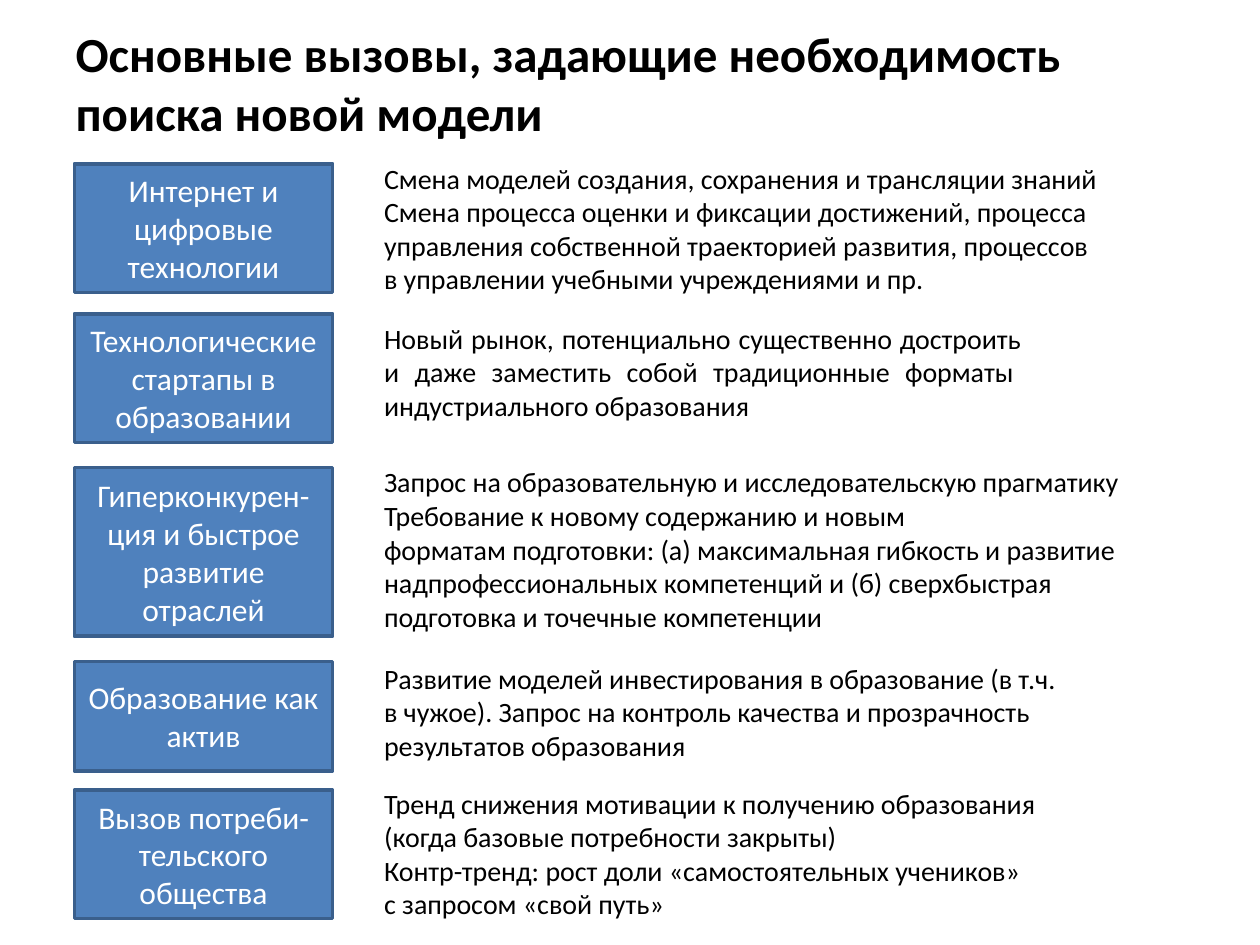
"""Builds a slide pairing challenges to education with their consequences."""
from pptx import Presentation
from pptx.dml.color import RGBColor
from pptx.enum.shapes import MSO_SHAPE
from pptx.enum.text import MSO_ANCHOR, MSO_AUTO_SIZE, PP_ALIGN
from pptx.util import Pt

RECTANGLE = MSO_SHAPE.RECTANGLE
MIDDLE = MSO_ANCHOR.MIDDLE
FIT_SHAPE = MSO_AUTO_SIZE.SHAPE_TO_FIT_TEXT
LEFT, CENTER, JUSTIFY = PP_ALIGN.LEFT, PP_ALIGN.CENTER, PP_ALIGN.JUSTIFY

COLORS = {"text": "000000", "label": "FFFFFF", "fill": "4F81BD", "border": "3A5F8C"}
FONT = "Calibri"
LABEL_LEFT, LABEL_WIDTH = 42.5, 147.6
DETAIL_LEFT = 212.4

HEADING = "Основные вызовы, задающие необходимость \nпоиска новой модели"

CHALLENGES = [
    ("Интернет и цифровые технологии", 93.6, 73.5,
     ["Смена моделей создания, сохранения и трансляции знаний",
      "Смена процесса оценки и фиксации достижений, процесса \n"
      "управления собственной траекторией развития, процессов \n"
      "в управлении учебными учреждениями и пр."],
     88.6, 426.2, 85, LEFT, False),
    ("Технологические\nстартапы в образовании", 179.3, 73.5,
     ["Новый рынок, потенциально существенно достроить \n"
      "и даже заместить собой традиционные форматы \n"
      "индустриального образования"],
     180, 383, 65.5, JUSTIFY, False),
    ("Гиперконкурен-ция и быстрое развитие отраслей", 267.1, 96.5,
     ["Запрос на образовательную и исследовательскую прагматику",
      "Требование к новому содержанию и новым \n"
      "форматам подготовки: (а) максимальная гибкость и развитие\n"
      "надпрофессиональных компетенций и (б) сверхбыстрая \n"
      "подготовка и точечные компетенции"],
     262.1, 439.2, 104.4, LEFT, False),
    ("Образование как актив", 378, 62.6,
     ["Развитие моделей инвестирования в образование (в т.ч.\n"
      "в чужое). Запрос на контроль качества и прозрачность\n"
      "результатов образования"],
     374.4, 403.2, 65.5, LEFT, False),
    ("Вызов потреби-тельского общества", 451.4, 73.5,
     ["Тренд снижения мотивации к получению образования \n"
      "(когда базовые потребности закрыты)",
      "Контр-тренд: рост доли «самостоятельных учеников» \n"
      "с запросом «свой путь»"],
     445.7, 426.2, 85, LEFT, True),
]


def rgb(name):
    return RGBColor.from_string(COLORS[name])


class ChallengeSlide:
    def __init__(self, slide):
        self.slide = slide

    def set_text(self, frame, paragraphs, size, color, align, bold=False):
        for index, text in enumerate(paragraphs):
            paragraph = frame.add_paragraph() if index else frame.paragraphs[0]
            paragraph.text = text
            paragraph.alignment = align
            font = paragraph.font
            font.name, font.size, font.bold = FONT, Pt(size), bold
            font.color.rgb = rgb(color)

    def title(self, text, left, top, width, height):
        heading = self.slide.shapes.title
        heading.left, heading.top = Pt(left), Pt(top)
        heading.width, heading.height = Pt(width), Pt(height)
        frame = heading.text_frame
        frame.word_wrap = False
        frame.auto_size = FIT_SHAPE
        frame.vertical_anchor = MIDDLE
        self.set_text(frame, [text], 28, "text", LEFT, bold=True)

    def label(self, text, top, height):
        box = self.slide.shapes.add_shape(
            RECTANGLE, Pt(LABEL_LEFT), Pt(top), Pt(LABEL_WIDTH), Pt(height))
        box.shadow.inherit = False
        box.fill.solid()
        box.fill.fore_color.rgb = rgb("fill")
        box.line.color.rgb = rgb("border")
        box.line.width = Pt(2)
        box.text_frame.word_wrap = True
        box.text_frame.vertical_anchor = MIDDLE
        self.set_text(box.text_frame, [text], 18, "label", CENTER)

    def details(self, paragraphs, top, width, height, align, wrap):
        box = self.slide.shapes.add_textbox(
            Pt(DETAIL_LEFT), Pt(top), Pt(width), Pt(height))
        box.text_frame.word_wrap = wrap
        box.text_frame.auto_size = FIT_SHAPE
        self.set_text(box.text_frame, paragraphs, 16, "text", align)


def main():
    deck = Presentation()
    deck.slide_width, deck.slide_height = Pt(720), Pt(540)
    page = ChallengeSlide(deck.slides.add_slide(deck.slide_layouts[5]))
    page.title(HEADING, 36, 9.4, 589, 74.9)
    for name, top, height, *consequences in CHALLENGES:
        page.label(name, top, height)
        page.details(*consequences)
    deck.save("out.pptx")


if __name__ == "__main__":
    main()
